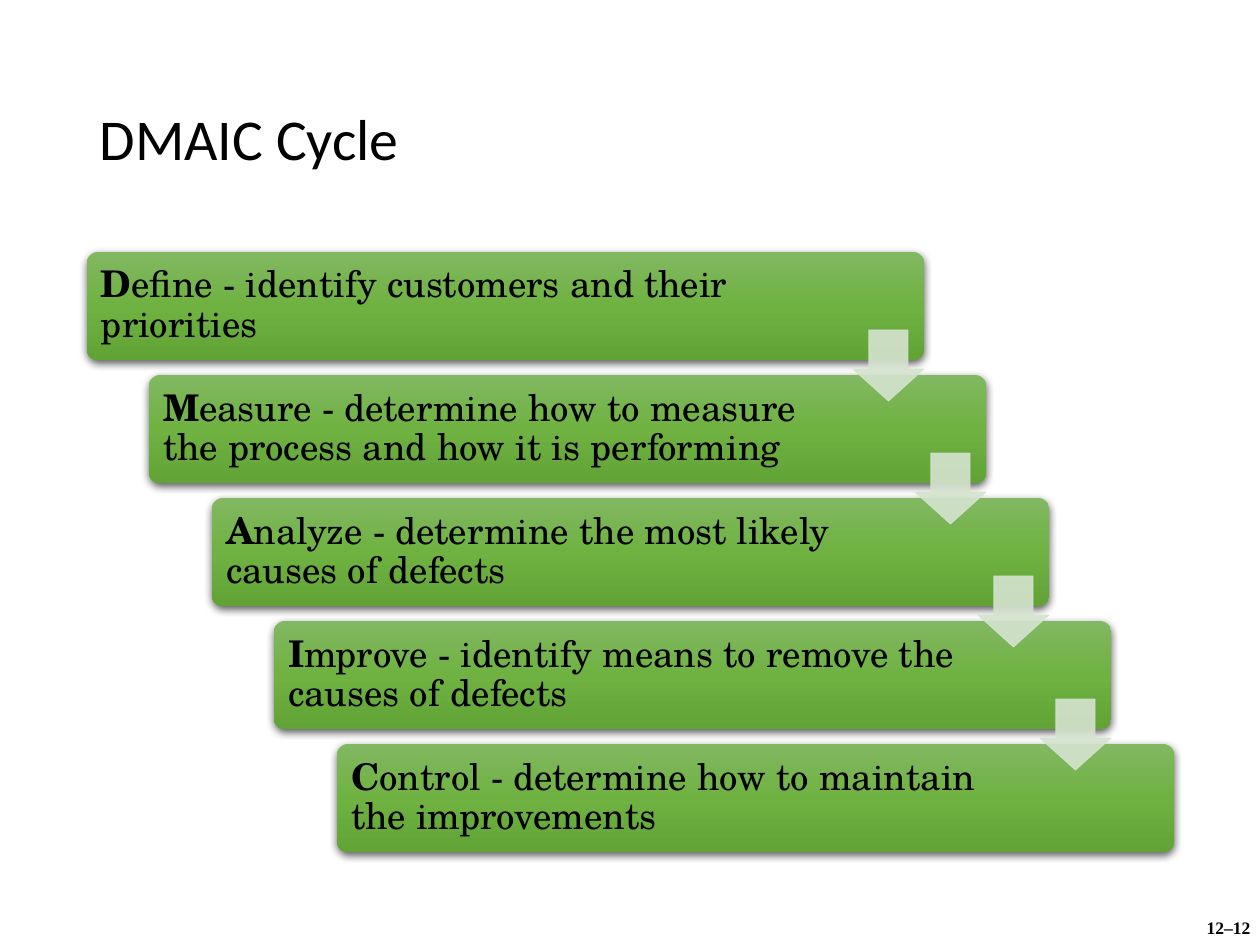
"""Build the DMAIC Cycle slide: five descending steps joined by arrows."""
import copy

import pptx
import pptx.dml.color
import pptx.enum.shapes
import pptx.enum.text
import pptx.oxml
import pptx.oxml.ns
import pptx.util
from lxml import etree

PX = 914400 / 126
SHAPE = pptx.enum.shapes.MSO_SHAPE
ALIGN = pptx.enum.text.PP_ALIGN
MIDDLE = pptx.enum.text.MSO_ANCHOR.MIDDLE
qn = pptx.oxml.ns.qn


def box(*lengths):
    return [round(length * PX) for length in lengths]


def color(value):
    return pptx.dml.color.RGBColor.from_string(value)


deck = pptx.Presentation()
deck.slide_width, deck.slide_height = box(1260, 945)
slide = deck.slides.add_slide(deck.slide_layouts[5])

title = slide.shapes.title
title.left, title.top, title.width, title.height = box(87, 50, 1086, 183)
title.text_frame.vertical_anchor = MIDDLE
heading = title.text_frame.paragraphs[0]
heading.alignment = ALIGN.LEFT
heading.line_spacing = 0.9
run = heading.add_run()
run.text = "DMAIC Cycle"
run.font.size = pptx.util.Pt(33)
run.font.name = "Calibri"
run.font.color.rgb = color("000000")

steps = [
    ("D", "efine - identify customers and their priorities", 708),
    ("M", "easure - determine how to measure the process and how it is performing", 698),
    ("A", "nalyze - determine the most likely causes of defects", 698),
    ("I", "mprove - identify means to remove the causes of defects", 698),
    ("C", "ontrol - determine how to maintain the improvements", 698),
]
gradient = [(0, "81B861"), (0.5, "6FB242"), (1, "62A336")]
cycle = slide.shapes.add_group_shape().shapes
corners = [(87 + 125 * i // 2, 252 + 123 * i) for i in range(len(steps))]

for (left, top), (initial, rest, text_width) in zip(corners, steps):
    card = cycle.add_shape(SHAPE.ROUNDED_RECTANGLE, *box(left, top, 837, 108))
    card.adjustments[0] = 0.1
    card.fill.gradient()
    card.fill.gradient_angle = 270
    stop_list = card._element.spPr.find(".//" + qn("a:gsLst"))
    stop_list.insert(1, copy.deepcopy(stop_list[0]))
    for stop, (position, shade) in zip(card.fill.gradient_stops, gradient):
        stop.position = position
        stop.color.rgb = color(shade)
    card.line.fill.background()
    card.shadow.inherit = False
    effects = card._element.spPr.find(qn("a:effectLst"))
    shadow = etree.SubElement(effects, qn("a:outerShdw"), blurRad="57150", dist="19050",
                              dir="5400000", algn="ctr", rotWithShape="0")
    shadow_color = etree.SubElement(shadow, qn("a:srgbClr"), val="000000")
    etree.SubElement(shadow_color, qn("a:alpha"), val="63000")

    label = cycle.add_textbox(*box(left + 3, top + 3, text_width, 102)).text_frame
    label.word_wrap = True
    label.vertical_anchor = MIDDLE
    label.margin_left = label.margin_right = label.margin_top = label.margin_bottom = box(11)[0]
    sentence = label.paragraphs[0]
    sentence.line_spacing = 0.9
    for wording, bold in ((initial, True), (rest, False)):
        run = sentence.add_run()
        run.text = wording
        run.font.size = pptx.util.Pt(21)
        run.font.name = "TeX Gyre Schola"
        run.font.bold = bold
        run.font.color.rgb = color("000000")

for left, top in corners[:-1]:
    arrow = cycle.add_shape(SHAPE.DOWN_ARROW, *box(left + 766, top + 78, 71, 71))
    arrow.adjustments[0] = 0.55
    arrow.adjustments[1] = 0.45
    arrow.shadow.inherit = False
    arrow.fill.solid()
    arrow.fill.fore_color.rgb = color("D5E3CF")
    arrow.line.color.rgb = color("D5E3CF")
    arrow.line.width = pptx.util.Pt(0.5)
    for tint in arrow._element.spPr.iter(qn("a:srgbClr")):
        etree.SubElement(tint, qn("a:alpha"), val="90000")

page = slide.shapes.add_textbox(*box(1192, 911, 73, 34)).text_frame
page.word_wrap = False
page.auto_size = pptx.enum.text.MSO_AUTO_SIZE.SHAPE_TO_FIT_TEXT
page.paragraphs[0].alignment = ALIGN.CENTER
run = page.paragraphs[0].add_run()
run.text = "12–12"
run.font.size = pptx.util.Pt(10)
run.font.name = "Times New Roman"
run.font.bold = True
run.font.color.rgb = color("000000")

deck.save("out.pptx")
